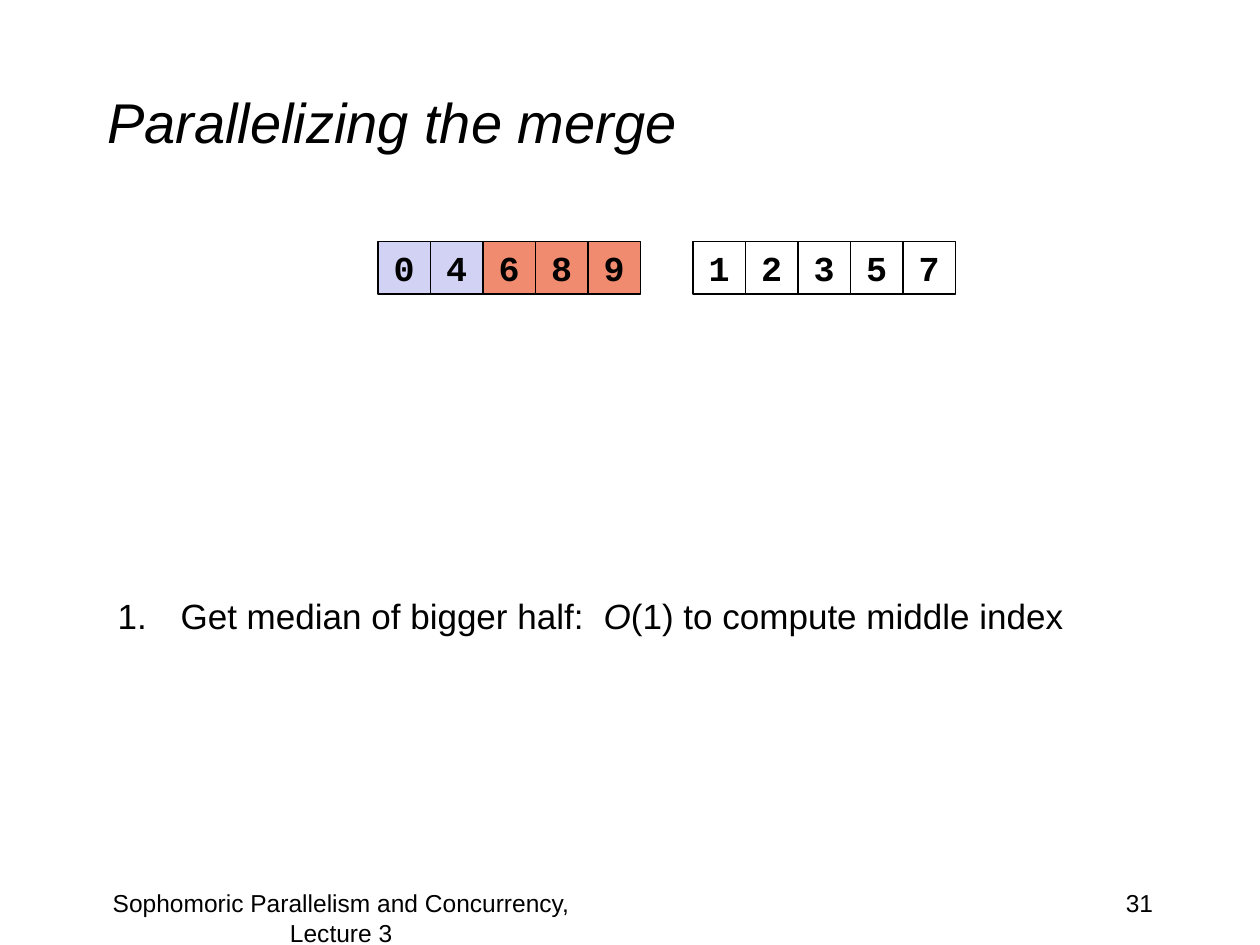
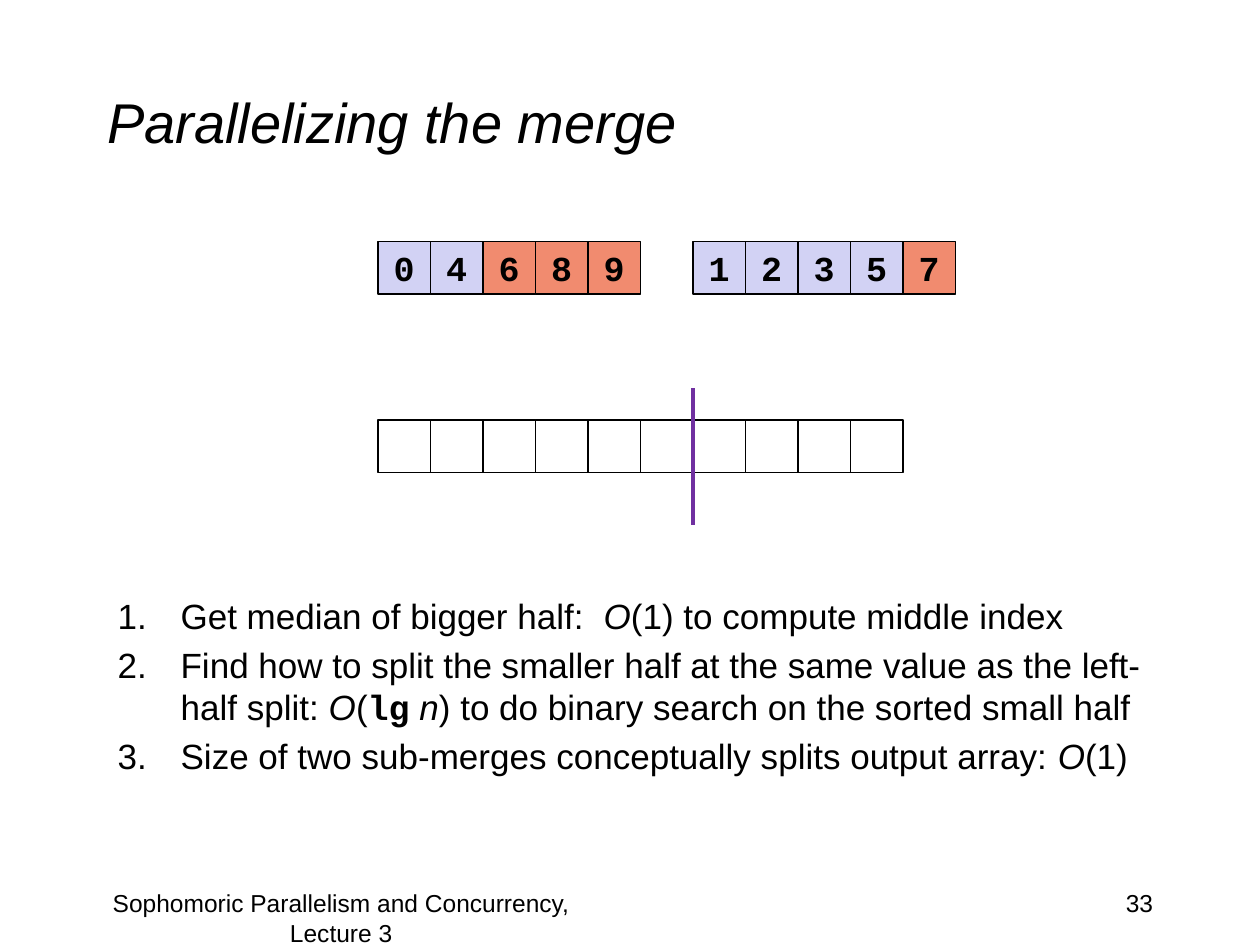
from lxml.etree import SubElement
from pptx import Presentation
from pptx.dml.color import RGBColor
from pptx.enum.shapes import MSO_CONNECTOR as Connector, MSO_SHAPE as Shape
from pptx.enum.text import MSO_ANCHOR as Anchor, MSO_AUTO_SIZE as AutoSize, PP_ALIGN as Align
from pptx.oxml.ns import qn
from pptx.util import Pt

# Shared style
BLACK, LOW, HIGH, SPLIT = "000000", "D2D2F4", "F18B6F", "7030A0"
SANS, MONO = "Arial", "Courier New"
TITLE = "Parallelizing the merge"
FOOTER = "Sophomoric Parallelism and Concurrency, Lecture 3"

# Array grid, in points
CELL = 30
LEFT = 216
INPUT_TOP, OUTPUT_TOP = 138, 240
LEFT_HALF, RIGHT_HALF = "04689", "12357"
RIGHT_START = LEFT + 6 * CELL

# Numbered steps: each is a list of (text, format) spans
ITALIC = {"italic": True}
STEPS = [
    [("Get median of bigger half:  ", {}), ("O", ITALIC),
     ("(1) to compute middle index", {})],
    [("Find how to split the smaller half at the same value as the left-half split: ", {}),
     ("O", ITALIC), ("(", {}), ("lg", {"font": MONO, "bold": True}), (" ", {}),
     ("n", ITALIC), (") to do binary search on the sorted small half", {})],
    [("Size of two sub-merges conceptually splits output array: ", {}),
     ("O", ITALIC), ("(1)", {})],
]


def color(value):
    return RGBColor.from_string(value)


def add_span(para, text, font=SANS, size=20, bold=False, italic=False, fill=BLACK):
    span = para.add_run()
    span.text = text
    span.font.name = font
    span.font.size = Pt(size)
    span.font.bold = bold
    span.font.italic = italic
    span.font.color.rgb = color(fill)


class DeckBuilder:
    def __init__(self):
        self.deck = Presentation()
        self.deck.slide_width, self.deck.slide_height = Pt(720), Pt(540)
        self.page = None

    def place(self, box, left, top, width, height):
        box.left, box.top, box.width, box.height = map(Pt, (left, top, width, height))

    def start_page(self, number):
        self.page = self.deck.slides.add_slide(self.deck.slide_layouts[1])
        self.title(TITLE)
        self.label(str(number), 516, 150, Align.RIGHT)
        self.label(FOOTER, 36, 318, Align.CENTER)

    def title(self, text):
        box = self.page.shapes.title
        self.place(box, 54, 24, 612, 90)
        frame = box.text_frame
        frame.auto_size = AutoSize.NONE
        frame.vertical_anchor = Anchor.MIDDLE
        para = frame.paragraphs[0]
        para.alignment = Align.LEFT
        add_span(para, text, size=32, italic=True)

    def label(self, text, left, width, align):
        box = self.page.shapes.add_textbox(Pt(left), Pt(504), Pt(width), Pt(36))
        box.text_frame.word_wrap = True
        para = box.text_frame.paragraphs[0]
        para.alignment = align
        add_span(para, text, size=14)

    def steps(self, steps, width):
        box = self.page.placeholders[1]
        self.place(box, 60, 336, width, 138)
        frame = box.text_frame
        frame.auto_size = AutoSize.NONE
        for index, spans in enumerate(steps):
            para = frame.add_paragraph() if index else frame.paragraphs[0]
            para.space_before = Pt(4)
            props = para._p.get_or_add_pPr()
            props.set("marL", str(Pt(36)))
            props.set("indent", str(Pt(-36)))
            SubElement(props, qn("a:buFont"), typeface=SANS)
            SubElement(props, qn("a:buAutoNum"), type="arabicPeriod")
            for text, style in spans:
                add_span(para, text, **style)

    def cell(self, left, top, text="", fill=None):
        box = self.page.shapes.add_shape(Shape.RECTANGLE, Pt(left), Pt(top), Pt(CELL), Pt(CELL))
        box.shadow.inherit = False
        box.line.color.rgb = color(BLACK)
        box.line.width = Pt(0.75)
        if fill:
            box.fill.solid()
            box.fill.fore_color.rgb = color(fill)
        else:
            box.fill.background()
        if text:
            frame = box.text_frame
            frame.word_wrap = False
            frame.vertical_anchor = Anchor.MIDDLE
            frame.paragraphs[0].alignment = Align.CENTER
            add_span(frame.paragraphs[0], text, font=MONO, bold=True)

    def array(self, left, values, split=None):
        """Draw one input array, coloured below and above its split if it has one."""
        for index, value in enumerate(values):
            fill = None if split is None else LOW if index < split else HIGH
            self.cell(left + index * CELL, INPUT_TOP, value, fill)

    def output(self, length):
        for index in range(length):
            self.cell(LEFT + index * CELL, OUTPUT_TOP)

    def split_line(self, x, top, bottom):
        line = self.page.shapes.add_connector(
            Connector.STRAIGHT, Pt(x), Pt(top), Pt(x), Pt(bottom))
        line.line.color.rgb = color(SPLIT)
        line.line.width = Pt(2.25)
        SubElement(line._element.spPr, qn("a:effectLst"))


def main():
    builder = DeckBuilder()

    # Median of the bigger half
    builder.start_page(31)
    builder.array(LEFT, LEFT_HALF, split=2)
    builder.array(RIGHT_START, RIGHT_HALF)
    builder.steps(STEPS[:1], 612)

    # Both halves split, and the output with them
    builder.start_page(33)
    builder.array(LEFT, LEFT_HALF, split=2)
    builder.array(RIGHT_START, RIGHT_HALF, split=4)
    builder.steps(STEPS, 618)
    builder.output(len(LEFT_HALF + RIGHT_HALF))
    builder.split_line(LEFT + (2 + 4) * CELL, 222, 300)

    builder.deck.save("out.pptx")


if __name__ == "__main__":
    main()
